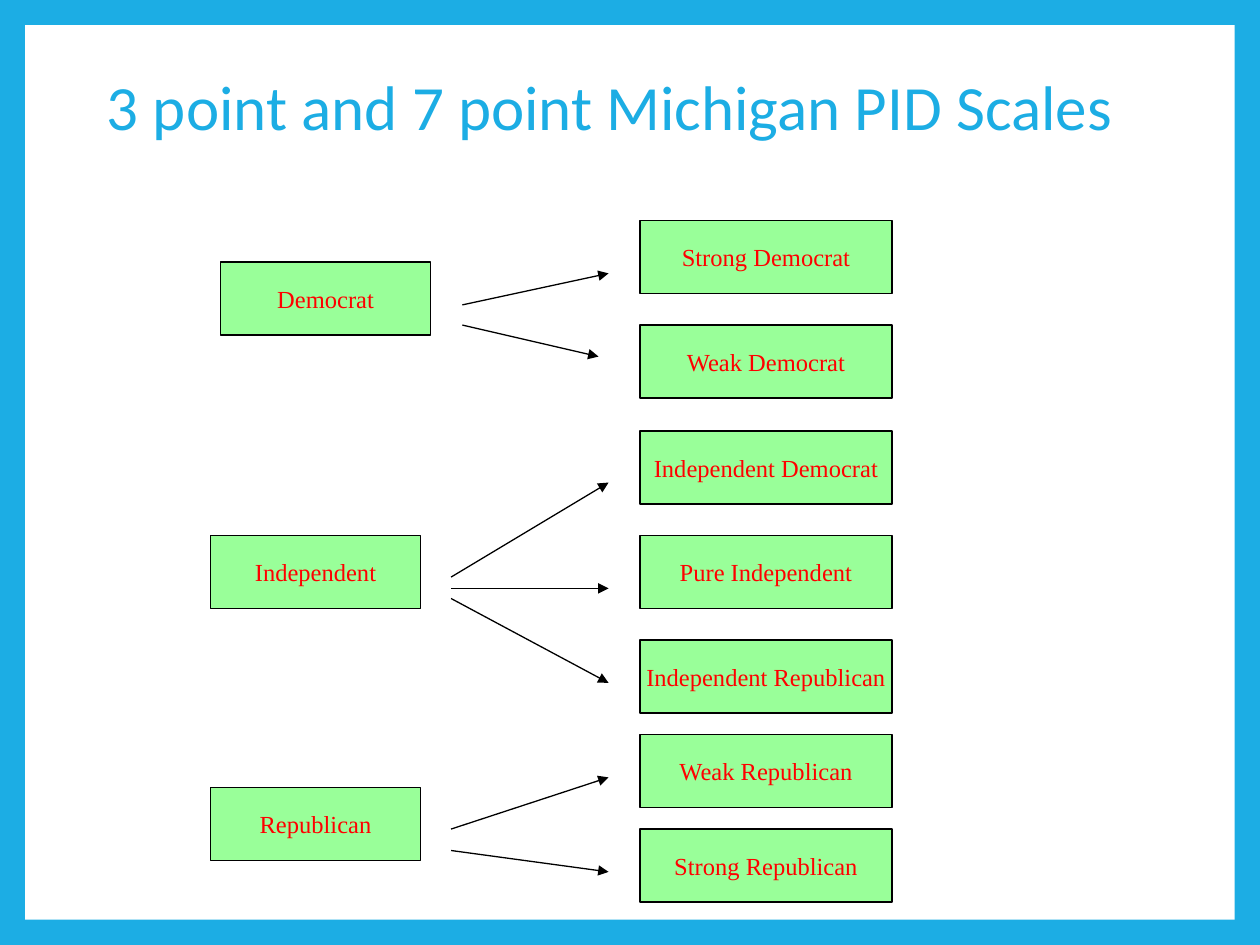
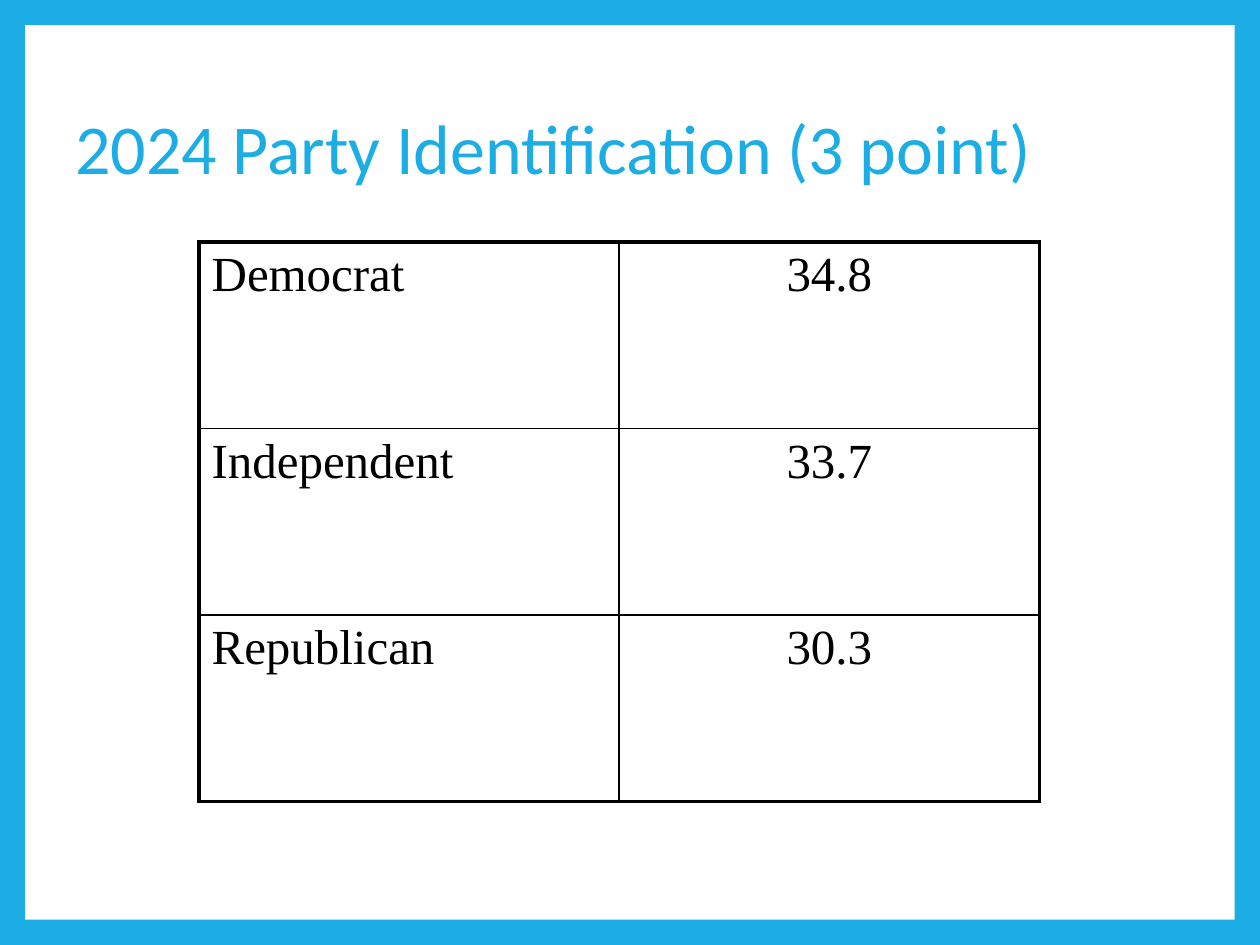
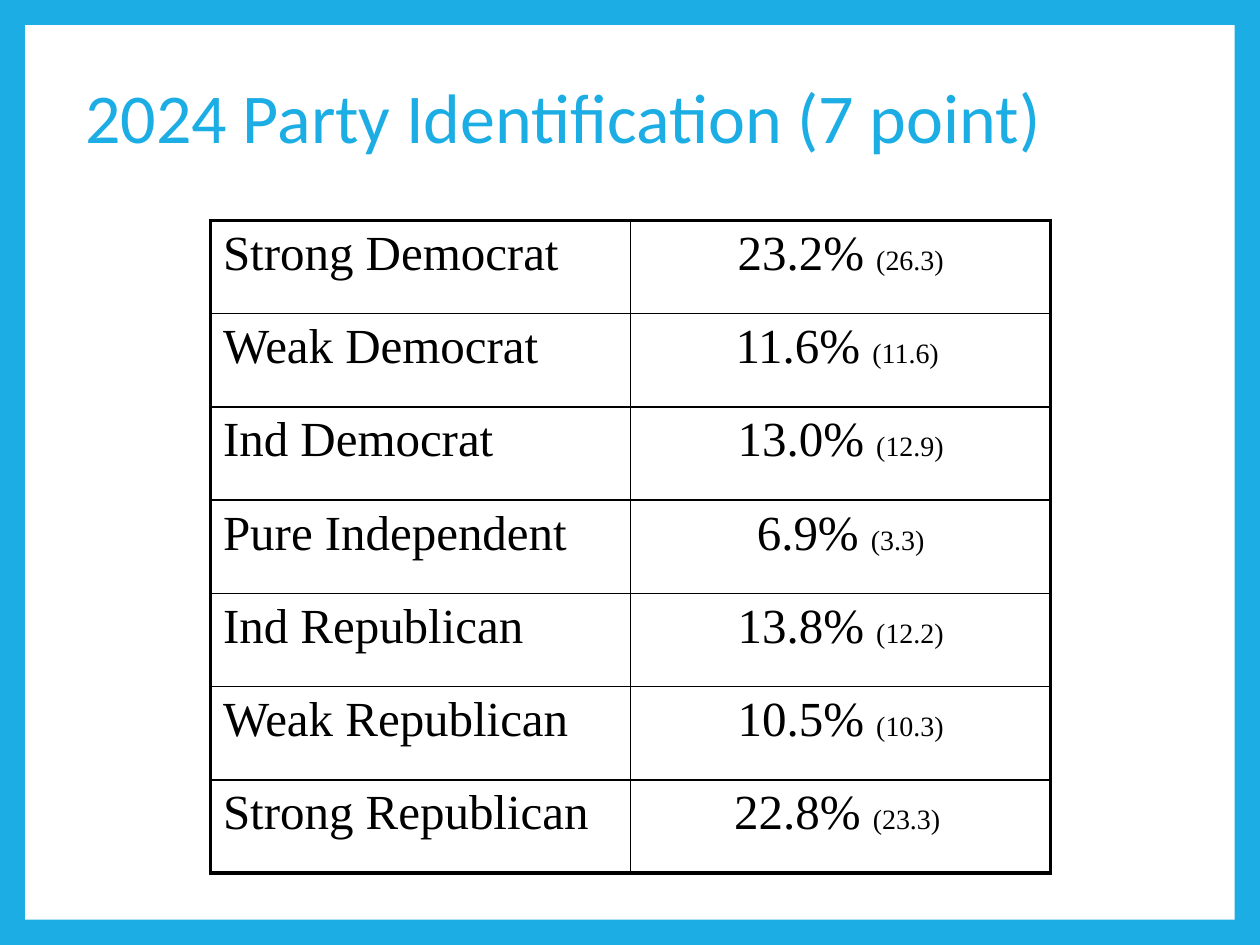
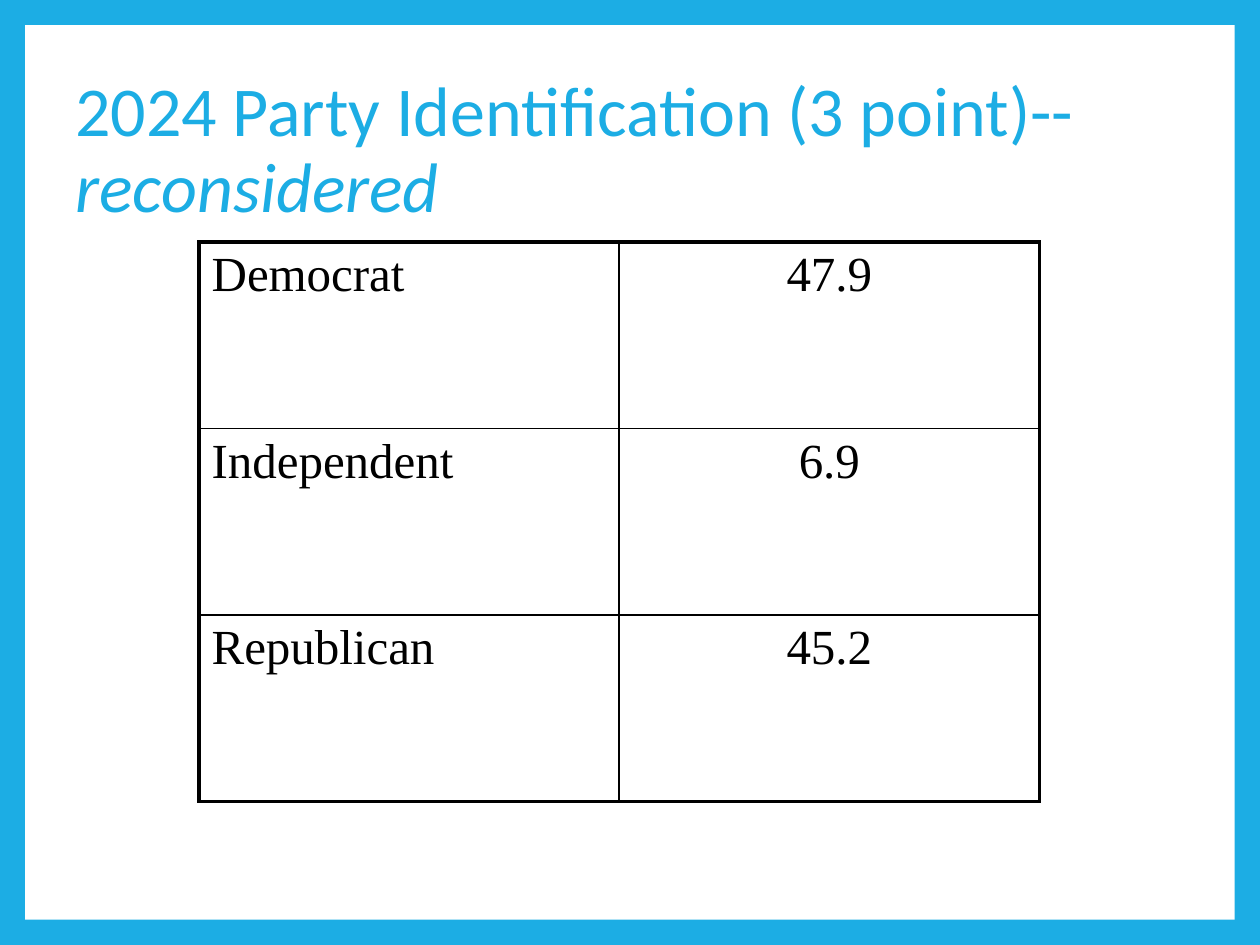
from lxml import etree
from pptx import Presentation
from pptx.dml.color import RGBColor
from pptx.enum.shapes import MSO_CONNECTOR, MSO_SHAPE
from pptx.enum.text import MSO_ANCHOR, PP_ALIGN
from pptx.oxml.ns import qn
from pptx.util import Inches, Pt

RECT = MSO_SHAPE.RECTANGLE
STRAIGHT = MSO_CONNECTOR.STRAIGHT
MIDDLE = MSO_ANCHOR.MIDDLE
LEFT, CENTER = PP_ALIGN.LEFT, PP_ALIGN.CENTER

BLUE, WHITE, GREEN, RED, BLACK = "1CADE4", "FFFFFF", "99FF99", "FF0000", "000000"
TITLE_FONT, BODY_FONT = "Calibri", "Times New Roman"
BOX_H = 0.58
PARTY_W = 1.67
SCALE_X, SCALE_W = 5.08, 2
TABLE_W = 6.67
OUTER, INNER = 2.25, 1

SCALE_TITLE = "3 point and 7 point Michigan PID Scales"
PARTIES = [
    ("Democrat", 1.75, 2.08),
    ("Independent", 1.67, 4.25),
    ("Republican", 1.67, 6.25),
]
SCALE = [
    ("Strong Democrat", 1.75),
    ("Weak Democrat", 2.58),
    ("Independent Democrat", 3.42),
    ("Pure Independent", 4.25),
    ("Independent Republican", 5.08),
    ("Weak Republican", 5.83),
    ("Strong Republican", 6.58),
]
ARROWS = [
    (3.67, 2.42, 4.83, 2.17),
    (3.67, 2.58, 4.75, 2.83),
    (3.58, 4.58, 4.83, 3.83),
    (3.58, 4.67, 4.83, 4.67),
    (3.58, 4.75, 4.83, 5.42),
    (3.58, 6.58, 4.83, 6.17),
    (3.58, 6.75, 4.83, 6.92),
]

TABLE_SLIDES = [
    {
        "title": ["2024 Party Identification (3 point)"],
        "title_at": (0.5, 0.58, 8.75),
        "table_at": (1.58, 1.92),
        "row_h": 1.48,
        "rows": [("Democrat", ["34.8"]), ("Independent", ["33.7"]), ("Republican", ["30.3"])],
    },
    {
        "title": ["2024 Party Identification (7 point)"],
        "title_at": (0.58, 0.33, 8.67),
        "table_at": (1.67, 1.75),
        "row_h": 0.74,
        "rows": [
            ("Strong Democrat", ["23.2% ", "(26.3)"]),
            ("Weak Democrat", ["11.6% ", "(11.6) "]),
            ("Ind Democrat", ["13.0% ", "(12.9)"]),
            ("Pure Independent", ["6.9% ", "(3.3)"]),
            ("Ind Republican", ["13.8% ", "(12.2)"]),
            ("Weak Republican", ["10.5% ", "(10.3)"]),
            ("Strong Republican", ["22.8% ", "(23.3) "]),
        ],
    },
    {
        "title": ["2024 Party Identification (3 point)-- ", "reconsidered"],
        "title_at": (0.5, 0.58, 8.75),
        "table_at": (1.58, 1.92),
        "row_h": 1.48,
        "rows": [("Democrat", ["47.9"]), ("Independent", ["6.9"]), ("Republican", ["45.2"])],
    },
]


def rgb(color):
    return RGBColor.from_string(color)


def add_run(p, text, font, size, color, italic=False):
    r = p.add_run()
    r.text = text
    r.font.name = font
    r.font.size = Pt(size)
    r.font.color.rgb = rgb(color)
    if italic:
        r.font.italic = True


def add_rect(s, x, y, w, h, fill, line=None):
    sp = s.shapes.add_shape(RECT, Inches(x), Inches(y), Inches(w), Inches(h))
    sp.shadow.inherit = False
    sp.fill.solid()
    sp.fill.fore_color.rgb = rgb(fill)
    if line:
        sp.line.color.rgb = rgb(line)
        sp.line.width = Pt(0.75)
    else:
        sp.line.fill.background()
    return sp


def add_slide(prs, title, x, y, w, size):
    s = prs.slides.add_slide(prs.slide_layouts[6])
    add_rect(s, 0.2, 0.2, 9.6, 7.1, WHITE)
    tf = s.shapes.add_textbox(Inches(x), Inches(y), Inches(w), Inches(1.25)).text_frame
    tf.word_wrap = True
    tf.vertical_anchor = MIDDLE
    p = tf.paragraphs[0]
    p.line_spacing = 0.9
    for i, text in enumerate(title):
        add_run(p, text, TITLE_FONT, size, BLUE, italic=i > 0)
    return s


def add_box(s, text, x, y, w):
    tf = add_rect(s, x, y, w, BOX_H, GREEN, BLACK).text_frame
    tf.word_wrap = False
    tf.vertical_anchor = MIDDLE
    p = tf.paragraphs[0]
    p.alignment = CENTER
    add_run(p, text, BODY_FONT, 14, RED)


def add_arrow(s, x1, y1, x2, y2):
    c = s.shapes.add_connector(STRAIGHT, Inches(x1), Inches(y1), Inches(x2), Inches(y2))
    c.line.color.rgb = rgb(BLACK)
    c.line.width = Pt(0.75)
    etree.SubElement(c.line._get_or_add_ln(), qn("a:tailEnd"), type="triangle")
    etree.SubElement(c._element.spPr, qn("a:effectLst"))


def set_borders(cell, widths):
    tc_pr = cell._tc.get_or_add_tcPr()
    for i, (side, width) in enumerate(widths.items()):
        ln = etree.Element(qn("a:ln" + side), w=str(Pt(width)))
        fill = etree.SubElement(ln, qn("a:solidFill"))
        etree.SubElement(fill, qn("a:srgbClr"), val=BLACK)
        tc_pr.insert(i, ln)


def add_table(s, rows, x, y, row_h):
    frame = s.shapes.add_table(len(rows), 2, Inches(x), Inches(y),
                               Inches(TABLE_W), Inches(row_h * len(rows)))
    table = frame.table
    table.first_row = False
    table.horz_banding = False
    last = len(rows) - 1
    for i, (label, value) in enumerate(rows):
        for j, texts in enumerate(([label], value)):
            cell = table.cell(i, j)
            cell.fill.background()
            set_borders(cell, {
                "L": OUTER if j == 0 else INNER,
                "R": OUTER if j == 1 else INNER,
                "T": OUTER if i == 0 else INNER,
                "B": OUTER if i == last else INNER,
            })
            p = cell.text_frame.paragraphs[0]
            p.alignment = CENTER if j else LEFT
            for text, size in zip(texts, (28, 16)):
                add_run(p, text, BODY_FONT, size, BLACK)


def main():
    prs = Presentation()
    prs.slide_width, prs.slide_height = Inches(10), Inches(7.5)
    background = prs.slide_master.background.fill
    background.solid()
    background.fore_color.rgb = rgb(BLUE)

    s = add_slide(prs, [SCALE_TITLE], 0.75, 0.25, 8.5, 36)
    for party, x, y in PARTIES:
        add_box(s, party, x, y, PARTY_W)
    for point, y in SCALE:
        add_box(s, point, SCALE_X, y, SCALE_W)
    for arrow in ARROWS:
        add_arrow(s, *arrow)

    for content in TABLE_SLIDES:
        s = add_slide(prs, content["title"], *content["title_at"], 40)
        add_table(s, content["rows"], *content["table_at"], content["row_h"])

    prs.save("out.pptx")


if __name__ == "__main__":
    main()
